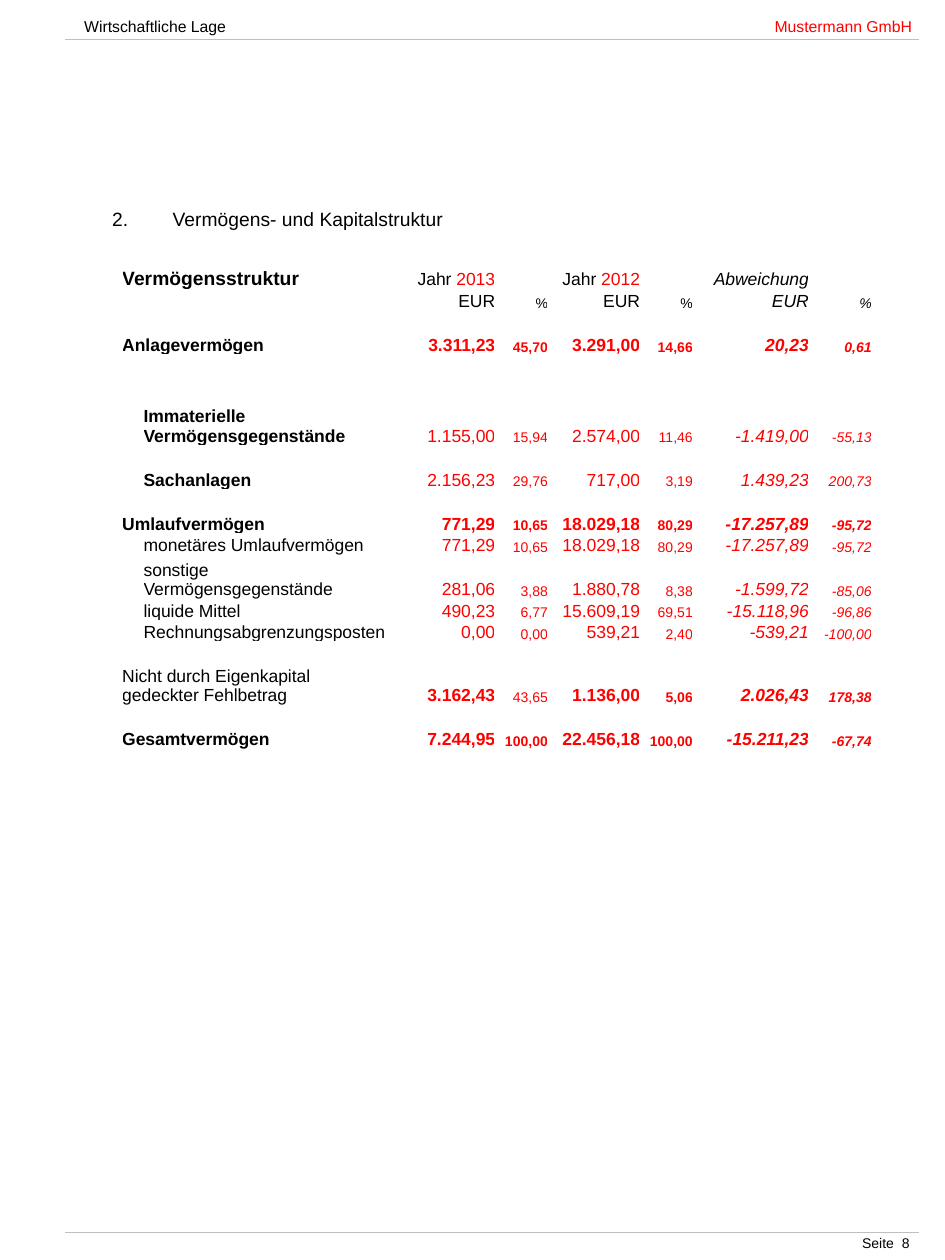
from lxml.etree import SubElement
from pptx import Presentation
from pptx.dml.color import RGBColor
from pptx.enum.shapes import MSO_CONNECTOR
from pptx.enum.text import MSO_ANCHOR, PP_ALIGN
from pptx.oxml.ns import qn
from pptx.util import Inches, Pt

BLACK = RGBColor(0, 0, 0)
RED = RGBColor(255, 0, 0)
GREY = RGBColor(191, 191, 191)

deck = Presentation()
deck.slide_width, deck.slide_height = Inches(7.5), Inches(10)
page = deck.slides.add_slide(deck.slide_layouts[5])


def add_text(para, text, size=10, color=BLACK, bold=False, italic=False, align=PP_ALIGN.LEFT):
    para.alignment = align
    span = para.add_run()
    span.text = text
    span.font.name, span.font.size = "Arial", Pt(size)
    span.font.bold, span.font.italic = bold, italic
    span.font.color.rgb = color


# Rules under the header and above the footer
for height in (0.31, 9.78):
    rule = page.shapes.add_connector(
        MSO_CONNECTOR.STRAIGHT, Inches(0.52), Inches(height), Inches(7.29), Inches(height))
    rule.line.color.rgb = GREY
    rule.line.width = Pt(0.1)
    SubElement(rule._element.spPr, qn("a:effectLst"))

# Header: chapter on the left, company at a right tab stop
header = page.shapes.add_textbox(Inches(0.57), Inches(0.08), Inches(6.93), Inches(0.25))
header.text_frame.word_wrap = True
para = header.text_frame.paragraphs[0]
add_text(para, "Wirtschaftliche Lage\t", size=9)
add_text(para, "Mustermann GmbH", size=9, color=RED)
tabs = SubElement(para._p.get_or_add_pPr(), qn("a:tabLst"))
SubElement(tabs, qn("a:tab"), pos=str(Inches(6.57)), algn="r")

# Footer: page number
footer = page.shapes.add_textbox(Inches(0.44), Inches(9.73), Inches(6.93), Inches(0.27))
footer.text_frame.word_wrap = True
footer.text_frame.vertical_anchor = MSO_ANCHOR.MIDDLE
footer.text_frame.margin_right = Inches(0.15)
add_text(footer.text_frame.paragraphs[0], "Seite  8", size=8, align=PP_ALIGN.RIGHT)

# Numbered title
title = page.shapes.title
title.left, title.top, title.width, title.height = (
    Inches(0.39), Inches(1.02), Inches(7.11), Inches(0.86))
title.text_frame.vertical_anchor = MSO_ANCHOR.BOTTOM
para = title.text_frame.paragraphs[0]
add_text(para, "Vermögens- und Kapitalstruktur", size=11)
para.line_spacing = Pt(15)
settings = para._p.get_or_add_pPr()
settings.set("marL", str(Inches(0.88)))
settings.set("indent", str(Inches(-0.48)))
SubElement(settings, qn("a:buFont"), typeface="Arial")
SubElement(settings, qn("a:buAutoNum"), type="arabicPeriod", startAt="2")

# Balance rows: table row, indented, bold label, bold values, label, values
BALANCE = [
    (3, False, True, True, "Anlagevermögen", "3.311,23 45,70 3.291,00 14,66 20,23 0,61"),
    (5, True, True, False, "Immaterielle Vermögensgegenstände",
     "1.155,00 15,94 2.574,00 11,46 -1.419,00 -55,13"),
    (7, True, True, False, "Sachanlagen", "2.156,23 29,76 717,00 3,19 1.439,23 200,73"),
    (9, False, True, True, "Umlaufvermögen",
     "771,29 10,65 18.029,18 80,29 -17.257,89 -95,72"),
    (10, True, False, False, "monetäres Umlaufvermögen",
     "771,29 10,65 18.029,18 80,29 -17.257,89 -95,72"),
    (11, True, False, False, "sonstige Vermögensgegenstände",
     "281,06 3,88 1.880,78 8,38 -1.599,72 -85,06"),
    (12, True, False, False, "liquide Mittel",
     "490,23 6,77 15.609,19 69,51 -15.118,96 -96,86"),
    (13, True, False, False, "Rechnungsabgrenzungsposten",
     "0,00 0,00 539,21 2,40 -539,21 -100,00"),
    (15, False, False, True, "Nicht durch Eigenkapital gedeckter Fehlbetrag",
     "3.162,43 43,65 1.136,00 5,06 2.026,43 178,38"),
    (17, False, True, True, "Gesamtvermögen",
     "7.244,95 100,00 22.456,18 100,00 -15.211,23 -67,74"),
]
COLUMNS = [0.17, 1.95, 0.11, 0.73, 0.42, 0.73, 0.42, 0.92, 0.5, 0.11]
TALL_ROWS = {0: 0.19, 3: 0.18, 5: 0.55, 7: 0.18, 9: 0.18, 11: 0.35, 15: 0.32, 17: 0.18}
ROWS = [TALL_ROWS.get(row, 0.17) for row in range(18)]

# Table grid without banding, fills or cell margins
table = page.shapes.add_table(
    len(ROWS), len(COLUMNS), Inches(0.97), Inches(2.11),
    Inches(sum(COLUMNS)), Inches(sum(ROWS))).table
table.first_row = table.horz_banding = False
for column, width in zip(table.columns, COLUMNS):
    column.width = Inches(width)
for row, height in zip(table.rows, ROWS):
    row.height = Inches(height)
for cell in table.iter_cells():
    cell.fill.background()
    cell.vertical_anchor = MSO_ANCHOR.BOTTOM
    cell.margin_left = cell.margin_right = cell.margin_top = cell.margin_bottom = 0

# Column headings
table.cell(0, 0).merge(table.cell(0, 1))
add_text(table.cell(0, 0).text_frame.paragraphs[0], "Vermögensstruktur", size=11, bold=True)
for column, heading, year in ((3, "Jahr ", "2013"), (5, "Jahr ", "2012"), (7, "Abweichung", "")):
    italic = column == 7
    para = table.cell(0, column).text_frame.paragraphs[0]
    add_text(para, heading, italic=italic, align=PP_ALIGN.RIGHT)
    if year:
        add_text(para, year, color=RED, align=PP_ALIGN.RIGHT)
    for offset, unit, size in ((0, "EUR", 10), (1, "%", 8)):
        add_text(table.cell(1, column + offset).text_frame.paragraphs[0], unit,
                 size=size, italic=italic, align=PP_ALIGN.RIGHT)

# Labels and values; percentages are smaller, deviations italic
for row, indented, bold_label, bold_values, label, values in BALANCE:
    if not indented:
        table.cell(row, 0).merge(table.cell(row, 1))
    add_text(table.cell(row, int(indented)).text_frame.paragraphs[0], label, bold=bold_label)
    for column, value in enumerate(values.split(), start=3):
        add_text(table.cell(row, column).text_frame.paragraphs[0], value,
                 size=10 if column % 2 else 8, color=RED, italic=column >= 7,
                 bold=bold_values and (row, column) != (15, 4), align=PP_ALIGN.RIGHT)

# Small type in empty cells keeps the rows low
for cell in table.iter_cells():
    if not cell.text_frame.text:
        SubElement(cell.text_frame.paragraphs[0]._p, qn("a:endParaRPr"), sz="800")

deck.save("out.pptx")
